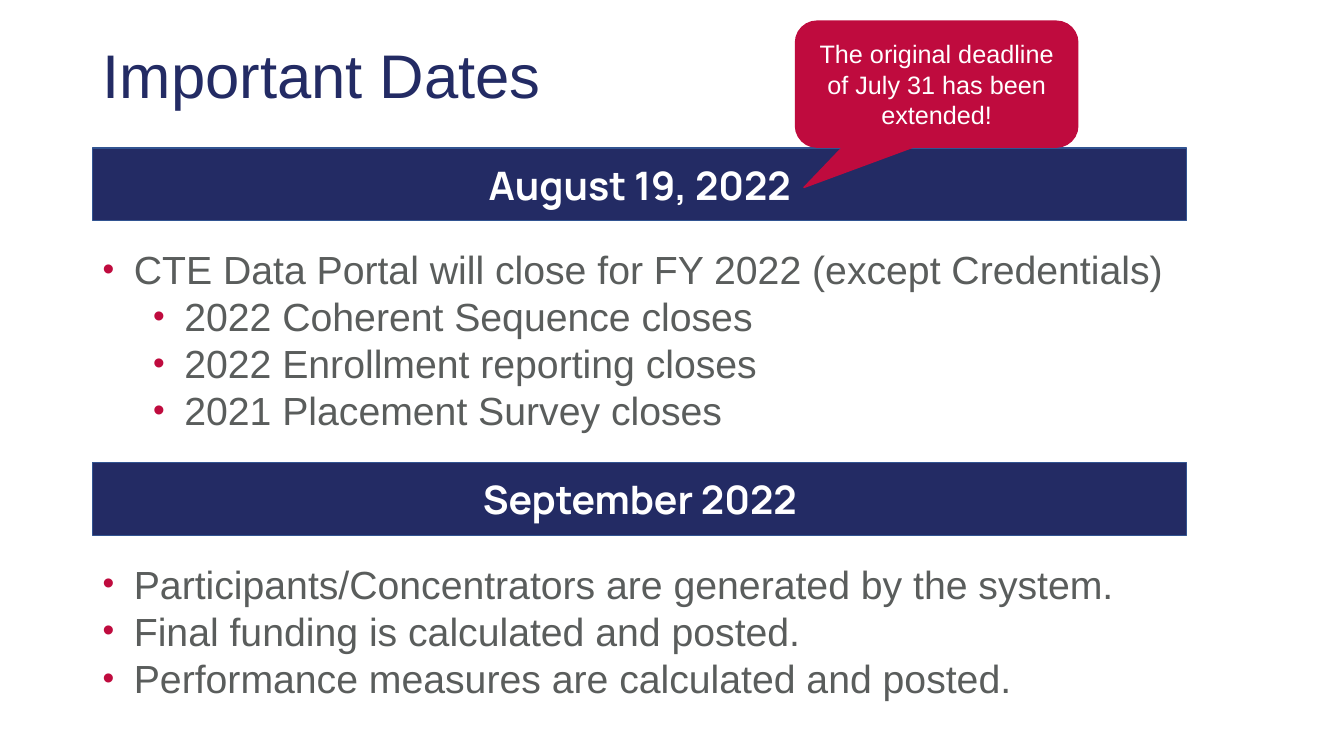
from dataclasses import dataclass

from lxml.etree import SubElement
from pptx import Presentation
from pptx.dml.color import RGBColor
from pptx.enum.shapes import MSO_SHAPE as Preset
from pptx.enum.text import MSO_ANCHOR as Anchor, MSO_AUTO_SIZE as AutoSize, PP_ALIGN as Align
from pptx.oxml.ns import qn
from pptx.util import Inches, Pt

NAVY = RGBColor(0x23, 0x2B, 0x64)
EDGE_BLUE = RGBColor(0x32, 0x54, 0x91)
CRIMSON = RGBColor(0xBF, 0x0B, 0x3E)
GREY = RGBColor(0x5A, 0x5D, 0x5C)
WHITE = RGBColor(0xFF, 0xFF, 0xFF)

LEFT, BAR_WIDTH, BAR_HEIGHT = 0.92, 10.85, 0.72
FIRST_BAR_TOP, SECTION_STEP, LIST_OFFSET = 1.47, 3.12, 0.915
HANGING, LEVEL_STEP = 0.31, 0.5

TITLE_FONT = {"name": "Arial", "size": Pt(44)}
BAR_FONT = {"name": "Manrope", "size": Pt(28), "bold": True}
LIST_FONT = {"name": "Arial", "size": Pt(28)}
CALLOUT_FONT = {"name": "Arial", "size": Pt(18)}


@dataclass
class Bullet:
    text: str
    level: int = 0


@dataclass
class Section:
    date: str
    width: float
    height: float
    bullets: list[Bullet]


SECTIONS = [
    Section("August 19, 2022", 10.85, 1.99, [
        Bullet("CTE Data Portal will close for FY 2022 (except Credentials)"),
        Bullet("2022 Coherent Sequence closes", 1),
        Bullet("2022 Enrollment reporting closes", 1),
        Bullet("2021 Placement Survey closes", 1),
    ]),
    Section("September 2022", 10.36, 1.51, [
        Bullet("Participants/Concentrators are generated by the system."),
        Bullet("Final funding is calculated and posted."),
        Bullet("Performance measures are calculated and posted."),
    ]),
]


def write(para, text: str, font: dict, color: RGBColor) -> None:
    span = para.add_run()
    span.text = text
    for name, value in font.items():
        setattr(span.font, name, value)
    span.font.color.rgb = color


def add_panel(page, preset, place: tuple, fill: RGBColor, edge: RGBColor,
              text: str, font: dict):
    panel = page.shapes.add_shape(preset, *map(Inches, place))
    panel.shadow.inherit = False
    panel.fill.solid()
    panel.fill.fore_color.rgb = fill
    panel.line.color.rgb = edge
    panel.line.width = Pt(1)
    frame = panel.text_frame
    frame.word_wrap = True
    frame.vertical_anchor = Anchor.MIDDLE
    frame.paragraphs[0].alignment = Align.CENTER
    write(frame.paragraphs[0], text, font, WHITE)
    return panel


def set_bullet(para, level: int) -> None:
    para.level = level
    props = para._p.get_or_add_pPr()
    props.set("marL", str(Inches(HANGING + level * LEVEL_STEP)))
    props.set("indent", str(-Inches(HANGING)))
    color = SubElement(props, qn("a:buClr"))
    SubElement(color, qn("a:srgbClr"), val=str(CRIMSON))
    SubElement(props, qn("a:buSzPct"), val="85000")
    SubElement(props, qn("a:buFont"), typeface="Arial")
    SubElement(props, qn("a:buChar"), char="•")


def add_list(page, top: float, section: Section) -> None:
    place = (LEFT, top, section.width, section.height)
    frame = page.shapes.add_textbox(*map(Inches, place)).text_frame
    frame.word_wrap = False
    frame.auto_size = AutoSize.SHAPE_TO_FIT_TEXT
    for index, bullet in enumerate(section.bullets):
        para = frame.add_paragraph() if index else frame.paragraphs[0]
        set_bullet(para, bullet.level)
        write(para, bullet.text, LIST_FONT, GREY)


def main() -> None:
    deck = Presentation()
    deck.slide_width, deck.slide_height = Inches(13.33), Inches(7.5)
    page = deck.slides.add_slide(deck.slide_layouts[6])

    # Title
    box = page.shapes.add_textbox(*map(Inches, (LEFT, 0.4, 11.5, 1.45)))
    box.text_frame.word_wrap = True
    heading = box.text_frame.paragraphs[0]
    heading.line_spacing = 0.9
    write(heading, "Important Dates", TITLE_FONT, NAVY)

    # Date bars with their lists
    for index, section in enumerate(SECTIONS):
        top = FIRST_BAR_TOP + index * SECTION_STEP
        add_panel(page, Preset.RECTANGLE, (LEFT, top, BAR_WIDTH, BAR_HEIGHT),
                  NAVY, EDGE_BLUE, section.date, BAR_FONT)
        add_list(page, top + LIST_OFFSET, section)

    # Callout pointing at the first date
    callout = add_panel(page, Preset.ROUNDED_RECTANGULAR_CALLOUT, (7.89, 0.21, 2.8, 1.25),
                        CRIMSON, CRIMSON,
                        "The original deadline of July 31 has been extended!", CALLOUT_FONT)
    for index, value in enumerate((-0.47, 0.82, 0.17)):
        callout.adjustments[index] = value

    deck.save("out.pptx")


if __name__ == "__main__":
    main()
